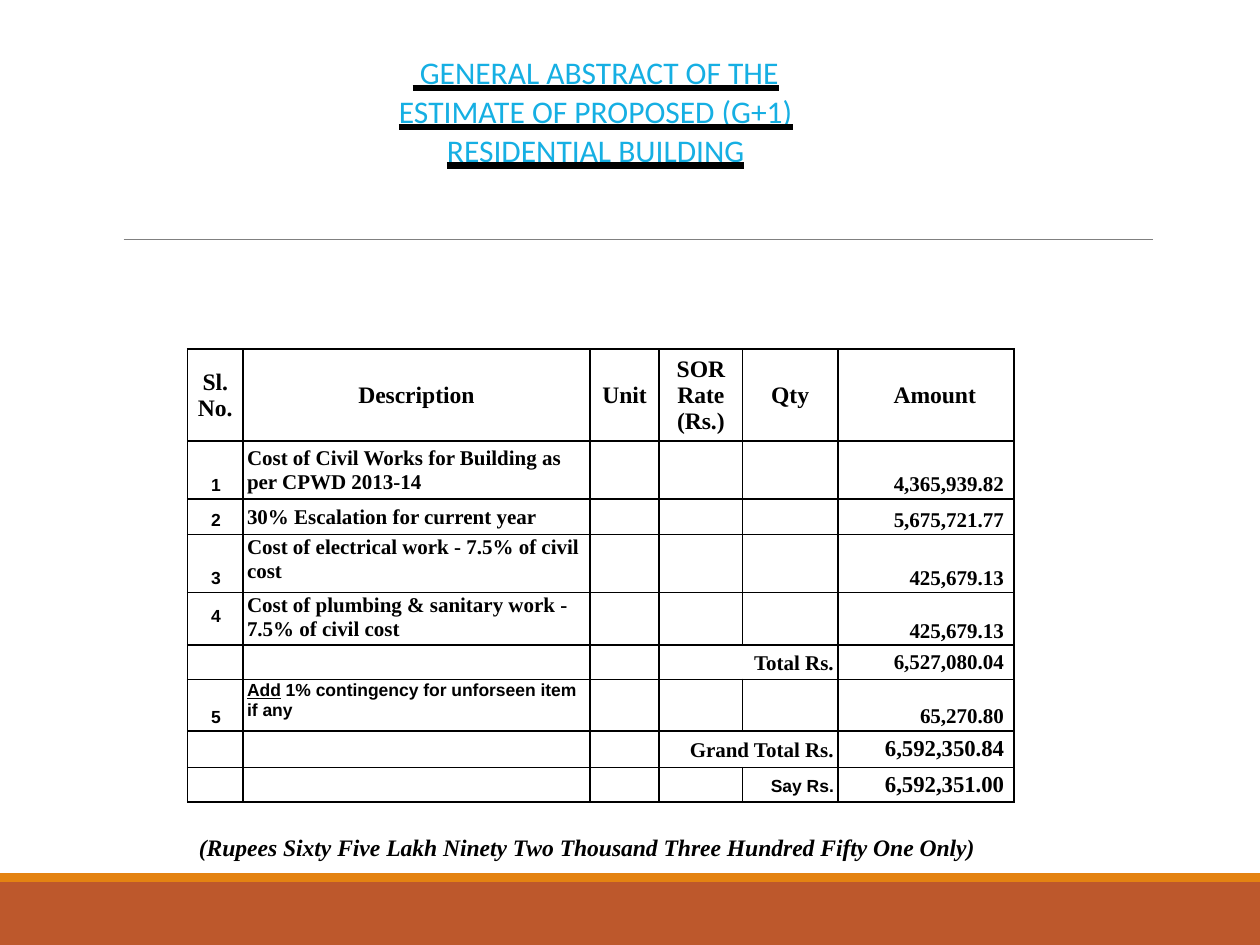
from lxml.etree import SubElement
from pptx import Presentation
from pptx.dml.color import RGBColor
from pptx.enum.shapes import MSO_CONNECTOR, MSO_SHAPE
from pptx.enum.text import MSO_ANCHOR, MSO_AUTO_SIZE, MSO_UNDERLINE, PP_ALIGN
from pptx.oxml.ns import qn
from pptx.util import Cm, Pt

BLACK = RGBColor(0x00, 0x00, 0x00)
GRAY = RGBColor(0x80, 0x80, 0x80)
BLUE = RGBColor(0x16, 0xAF, 0xE3)
RUST = RGBColor(0xBD, 0x58, 0x2C)
ORANGE = RGBColor(0xE4, 0x83, 0x12)

TITLE = {"name": "Calibri", "size": Pt(18), "bold": False, "underline": MSO_UNDERLINE.HEAVY_LINE}
WORDS = {"name": "Times New Roman", "size": Pt(13.5), "bold": True, "italic": True}
HEADER = {"name": "Times New Roman", "size": Pt(13.5), "bold": True}
BODY = {"name": "Times New Roman", "size": Pt(12), "bold": True}
SUM = {"name": "Times New Roman", "size": Pt(13), "bold": True}
SMALL = {"name": "Arial", "size": Pt(10), "bold": True}
UNDERLINED = {**SMALL, "underline": True}

TOP, MIDDLE, BOTTOM = MSO_ANCHOR.TOP, MSO_ANCHOR.MIDDLE, MSO_ANCHOR.BOTTOM
LEFT, CENTER, RIGHT = PP_ALIGN.LEFT, PP_ALIGN.CENTER, PP_ALIGN.RIGHT
NO_MARGINS = {f"margin_{side}": 0 for side in ("left", "top", "right", "bottom")}

COLUMN_WIDTHS = [1.12, 6.99, 1.4, 1.68, 1.92, 3.55]
ROW_HEIGHTS = [1.85, 1.17, 0.71, 1.17, 1.04, 0.69, 1.04, 0.74, 0.69]
HEADINGS = ["Sl.\nNo.", "Description", "Unit", "SOR\nRate\n(Rs.)", "Qty", "Amount"]
ITEMS = [
    (1, "1", BOTTOM, [("Cost of Civil Works for Building as per CPWD 2013-14", BODY)],
     MIDDLE, 0.2, "4,365,939.82"),
    (2, "2", BOTTOM, [("30% Escalation for current year", BODY)], MIDDLE, 0, "5,675,721.77"),
    (3, "3", BOTTOM, [("Cost of electrical work - 7.5% of civil cost", BODY)],
     TOP, 0, "425,679.13"),
    (4, "4", MIDDLE, [("Cost of plumbing & sanitary work - 7.5% of civil cost", BODY)],
     TOP, 0, "425,679.13"),
    (6, "5", BOTTOM, [("Add", UNDERLINED), (" 1% contingency for unforseen item if any", SMALL)],
     TOP, 0.25, "65,270.80"),
]
TOTALS = [
    (5, 3, "Total Rs.", BODY, "6,527,080.04", BODY),
    (7, 3, "Grand Total Rs.", BODY, "6,592,350.84", SUM),
    (8, 4, "Say Rs.", SMALL, "6,592,351.00", SUM),
]


def set_values(target, values):
    """Set each named attribute of the target."""
    for name, value in values.items():
        setattr(target, name, value)


def add_span(para, text, style, color=BLACK):
    """Append a formatted run to a paragraph."""
    span = para.add_run()
    span.text = text
    set_values(span.font, style)
    span.font.color.rgb = color
    return span


def add_bar(page, top, height, color):
    """Draw a full-width footer bar."""
    bar = page.shapes.add_shape(MSO_SHAPE.RECTANGLE, 0, Cm(top), Cm(25.4), Cm(height))
    bar.shadow.inherit = False
    bar.fill.solid()
    bar.fill.fore_color.rgb = color
    bar.line.fill.background()


def add_rule(page):
    """Draw the thin line below the title."""
    rule = page.shapes.add_connector(
        MSO_CONNECTOR.STRAIGHT, Cm(2.49), Cm(4.83), Cm(23.24), Cm(4.83))
    rule.line.color.rgb = GRAY
    rule.line.width = Pt(0.5)
    SubElement(rule._element.spPr, qn("a:effectLst"))


def fill_title(page):
    """Place the title with its heavy black underline."""
    title = page.shapes.title
    set_values(title, {"left": Cm(7.16), "top": Cm(0.99), "width": Cm(9.7), "height": Cm(2.41)})
    set_values(title.text_frame, {**NO_MARGINS, "word_wrap": True, "vertical_anchor": BOTTOM,
                                  "auto_size": MSO_AUTO_SIZE.NONE})
    para = title.text_frame.paragraphs[0]
    set_values(para, {"alignment": CENTER, "line_spacing": 1.03})
    span = add_span(para, " GENERAL ABSTRACT OF THE ESTIMATE OF PROPOSED (G+1) RESIDENTIAL BUILDING",
                    TITLE, BLUE)
    underline = span.font._element.makeelement(qn("a:uFill"))
    color = SubElement(SubElement(underline, qn("a:solidFill")), qn("a:srgbClr"))
    color.set("val", str(BLACK))
    span.font._element.find(qn("a:solidFill")).addnext(underline)


def add_amount_in_words(page):
    """Write the amount in words below the table."""
    box = page.shapes.add_textbox(Cm(4.01), Cm(16.79), Cm(16.1), Cm(0.64))
    set_values(box.text_frame, {**NO_MARGINS, "word_wrap": False})
    para = box.text_frame.paragraphs[0]
    para.space_before = Pt(1.1)
    add_span(para, "(Rupees Sixty Five Lakh Ninety Two Thousand Three Hundred Fifty One Only)", WORDS)


def prepare_cell(cell):
    """Give a cell black borders, no fill, no margins and a small empty line."""
    set_values(cell, NO_MARGINS)
    properties = cell._tc.get_or_add_tcPr()
    for side in ("lnL", "lnR", "lnT", "lnB"):
        border = SubElement(properties, qn(f"a:{side}"), w=str(Pt(1)))
        SubElement(SubElement(border, qn("a:solidFill")), qn("a:srgbClr"), val=str(BLACK))
    cell.fill.background()
    SubElement(cell.text_frame.paragraphs[0]._p, qn("a:endParaRPr"), sz="1000")


def write_cell(cell, spans, alignment, anchor, **margins):
    """Write runs into a cell, one paragraph per line of a run."""
    set_values(cell, {"vertical_anchor": anchor,
                      **{f"margin_{side}": Cm(size) for side, size in margins.items()}})
    para = cell.text_frame.paragraphs[0]
    for text, style in spans:
        for index, line in enumerate(text.split("\n")):
            para = cell.text_frame.add_paragraph() if index else para
            para.alignment = alignment
            add_span(para, line, style)


def add_estimate(page):
    """Build the table of costs and totals."""
    frame = page.shapes.add_table(len(ROW_HEIGHTS), len(COLUMN_WIDTHS), Cm(3.78), Cm(7.04),
                                  Cm(sum(COLUMN_WIDTHS)), Cm(sum(ROW_HEIGHTS)))
    table = frame.table
    set_values(table, {"first_row": False, "horz_banding": False})
    for column, width in zip(table.columns, COLUMN_WIDTHS):
        column.width = Cm(width)
    for row, height in zip(table.rows, ROW_HEIGHTS):
        row.height = Cm(height)
    for cell in table.iter_cells():
        prepare_cell(cell)

    for column, heading in enumerate(HEADINGS):
        shift = 0.36 if heading == "Amount" else 0
        write_cell(table.cell(0, column), [(heading, HEADER)], CENTER, MIDDLE, left=shift)
    for row, number, number_anchor, description, anchor, right, amount in ITEMS:
        write_cell(table.cell(row, 0), [(number, SMALL)], CENTER, number_anchor,
                   left=0.03, bottom=0.08)
        cell = table.cell(row, 1)
        write_cell(cell, description, LEFT, anchor, left=0.08, right=right)
        cell.text_frame.paragraphs[0].line_spacing = 1.05
        write_cell(table.cell(row, 5), [(amount, BODY)], RIGHT, BOTTOM, right=0.2, bottom=0.05)
    for row, first, label, label_style, amount, amount_style in TOTALS:
        cell = table.cell(row, first)
        if first < 4:
            cell.merge(table.cell(row, 4))
        write_cell(cell, [(label, label_style)], RIGHT, MIDDLE, right=0.08, top=0.05)
        write_cell(table.cell(row, 5), [(amount, amount_style)], RIGHT, MIDDLE, right=0.2)


def main():
    """Build and save the slide."""
    deck = Presentation()
    set_values(deck, {"slide_width": Cm(25.4), "slide_height": Cm(19.05)})
    page = deck.slides.add_slide(deck.slide_layouts[5])
    add_bar(page, 17.78, 1.27, RUST)
    add_bar(page, 17.6, 0.18, ORANGE)
    add_rule(page)
    add_amount_in_words(page)
    fill_title(page)
    add_estimate(page)
    deck.save("out.pptx")


if __name__ == "__main__":
    main()
